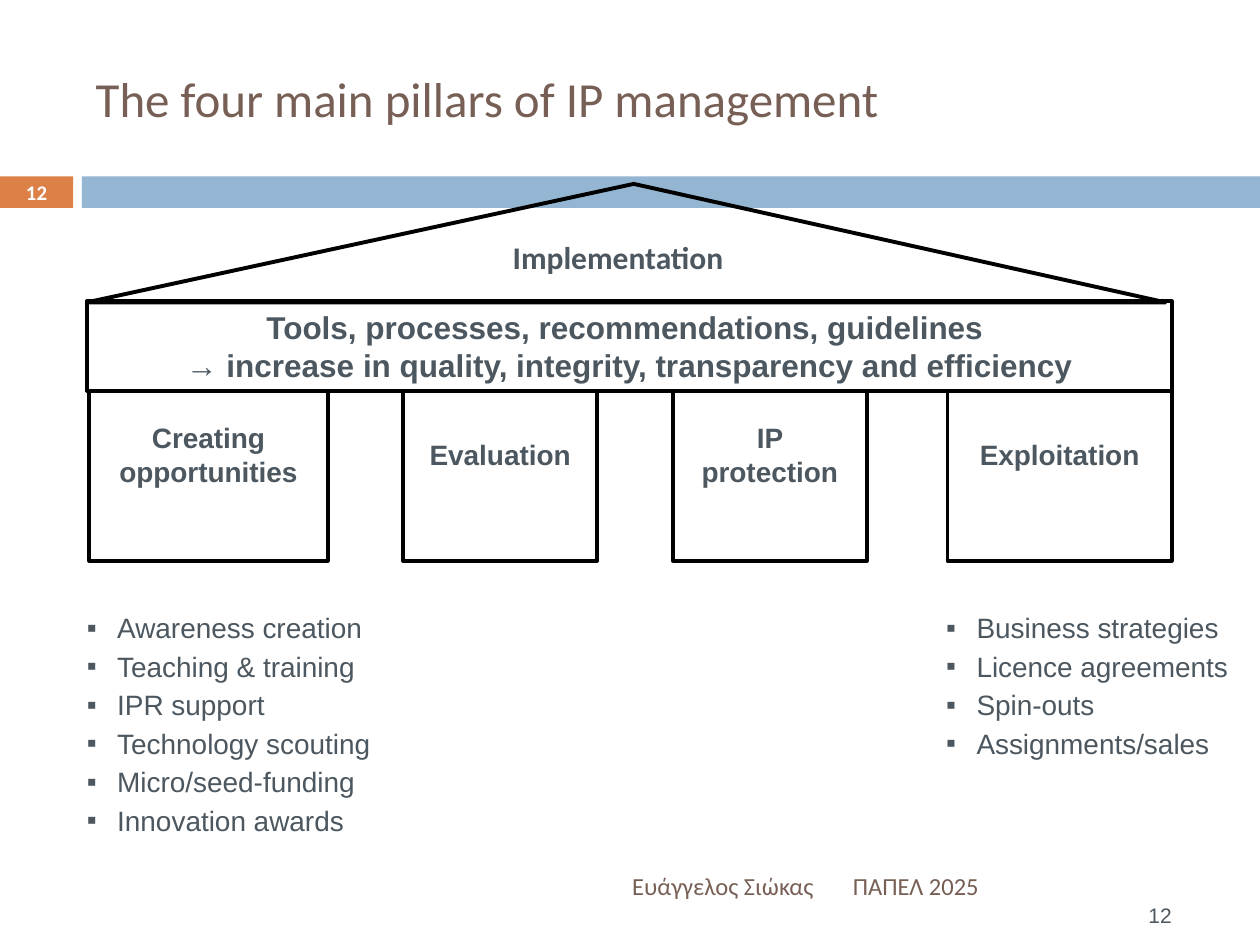
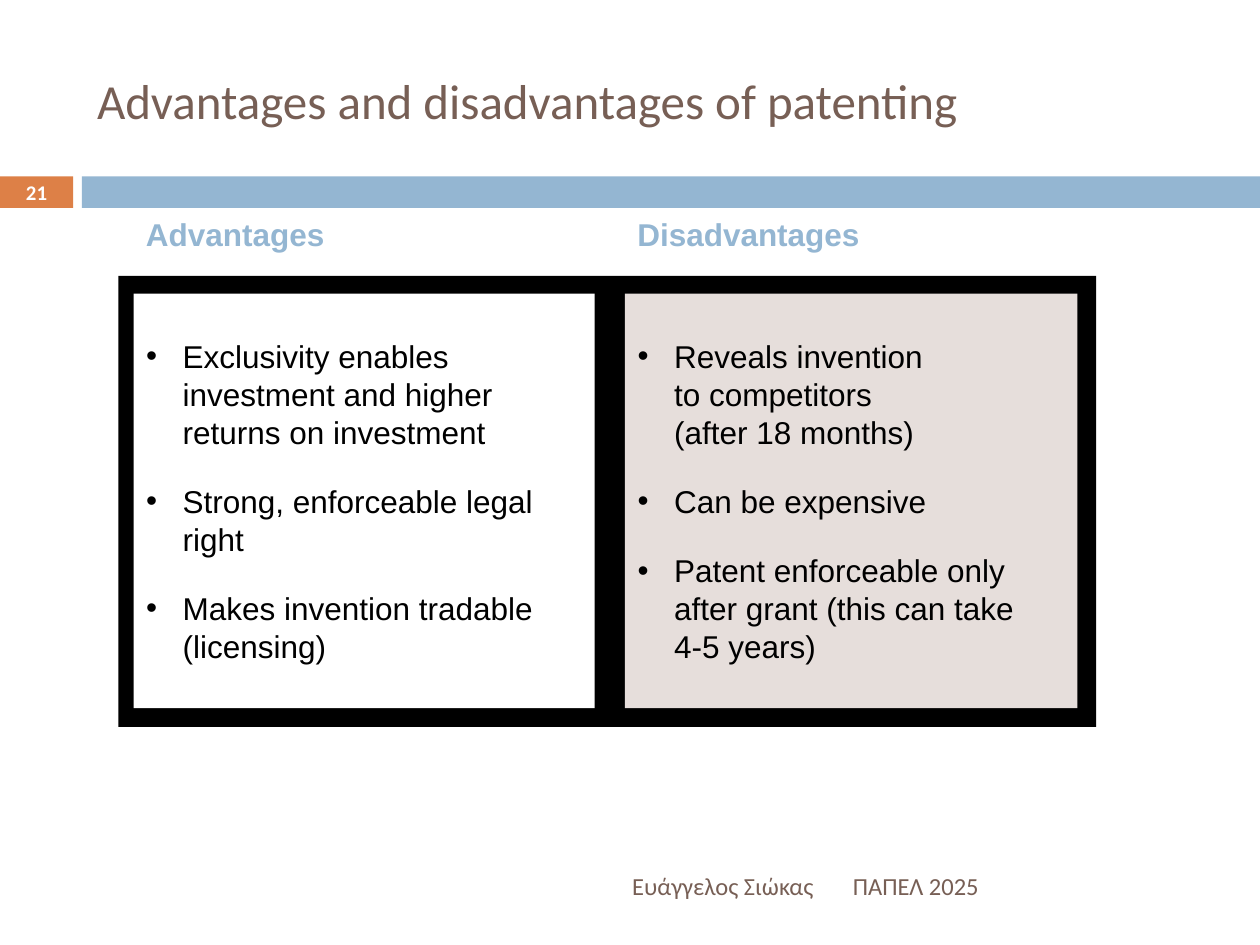
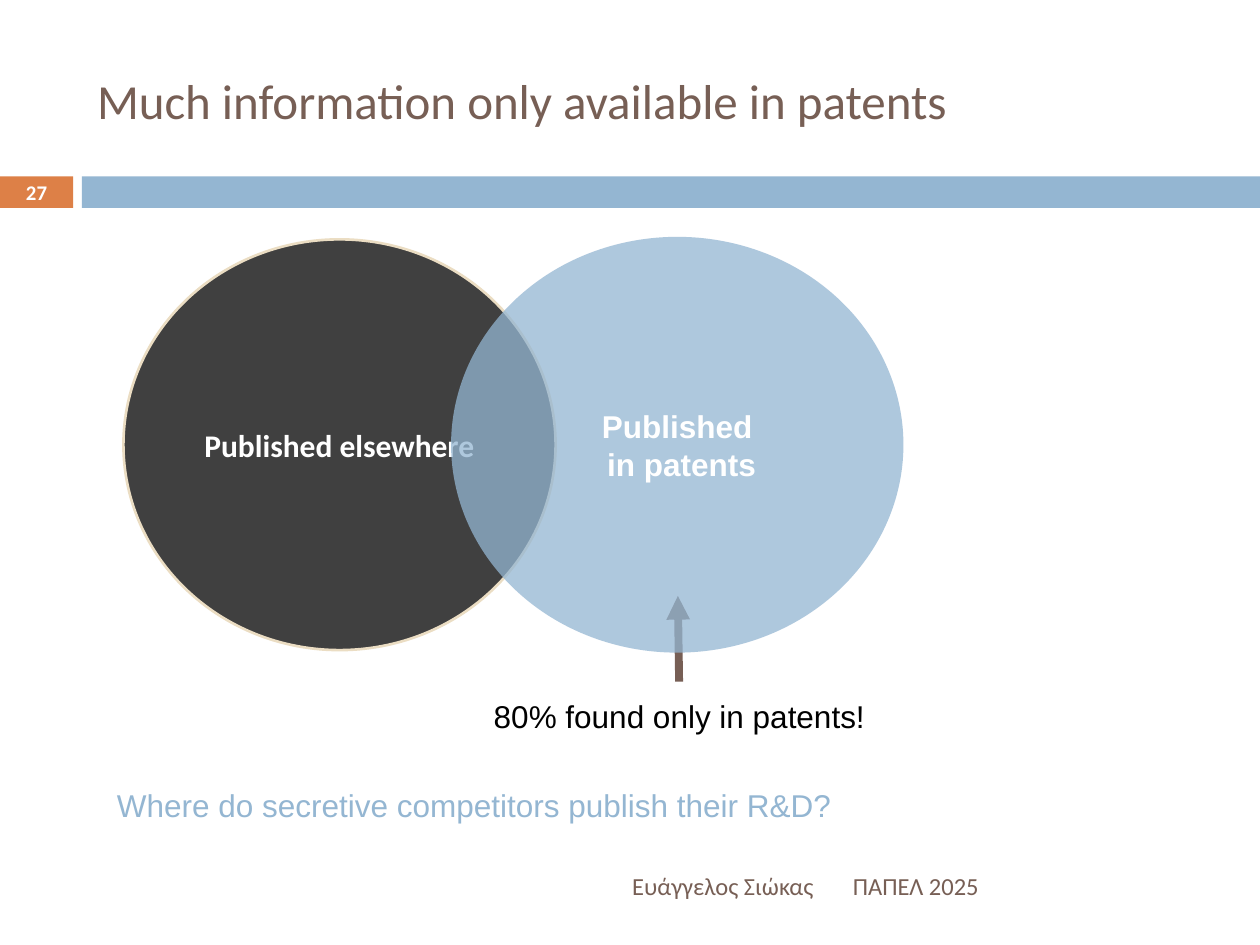
from dataclasses import dataclass
from typing import NamedTuple, Optional

from lxml.etree import SubElement
from pptx import Presentation
from pptx.dml.color import RGBColor
from pptx.enum.shapes import MSO_CONNECTOR as Link, MSO_SHAPE as Form
from pptx.enum.text import MSO_ANCHOR as Anchor, MSO_AUTO_SIZE as Auto, PP_ALIGN as Align
from pptx.oxml.ns import qn
from pptx.util import Inches, Pt

# Shared colours
BROWN, BLUE, ORANGE = "775F55", "94B6D2", "DD8047"
SLATE, BLACK, WHITE = "4C575F", "000000", "FFFFFF"
SAND, ROSE = "EBDDC3", "E6DEDB"


class Box(NamedTuple):
    left: float
    top: float
    width: float
    height: float


@dataclass(frozen=True)
class Style:
    size: float
    color: str
    font: str = "Arial"
    bold: bool = False
    align: Align = Align.LEFT
    anchor: Anchor = Anchor.TOP
    wrap: bool = True


@dataclass(frozen=True)
class Bullet:
    mark: str
    indent: float
    after: float = 0
    line: Optional[float] = None


@dataclass(frozen=True)
class Pillar:
    text: str
    left: float
    width: float
    inset: float


# Shared places and text styles
HEAD = Box(0.67, 0.25, 8.92, 1.08)
TITLE = Style(28, BROWN, "Calibri", anchor=Anchor.MIDDLE)
NUMBER = Style(11.9, WHITE, "Calibri", True, Align.CENTER, Anchor.MIDDLE)
COURSE = Style(14, BROWN, "Calibri", anchor=Anchor.MIDDLE)
AUTHOR = Style(14, BROWN, "Calibri", align=Align.RIGHT, anchor=Anchor.MIDDLE)


def rgb(code: str) -> RGBColor:
    return RGBColor.from_string(code)


def place(shape, box: Box) -> None:
    shape.left, shape.top, shape.width, shape.height = map(Inches, box)


def write(shape, lines: list[str], style: Style, bullet: Optional[Bullet] = None) -> None:
    frame = shape.text_frame
    frame.auto_size = Auto.NONE
    frame.word_wrap = style.wrap
    frame.vertical_anchor = style.anchor
    for index, line in enumerate(lines):
        para = frame.add_paragraph() if index else frame.paragraphs[0]
        para.text = line
        para.alignment = style.align
        para.space_before = Pt(0)
        if bullet:
            mark(para, bullet)
        for run in para.runs:
            font = run.font
            font.name, font.size, font.bold = style.font, Pt(style.size), style.bold
            font.color.rgb = rgb(style.color)


def mark(para, bullet: Bullet) -> None:
    props = para._p.get_or_add_pPr()
    props.set("marL", str(Inches(bullet.indent)))
    props.set("indent", str(-Inches(bullet.indent)))
    SubElement(props, qn("a:buChar")).set("char", bullet.mark)
    para.space_after = Pt(bullet.after)
    if bullet.line:
        para.line_spacing = Pt(bullet.line)


def label(slide, box: Box, text: str, style: Style):
    shape = slide.shapes.add_textbox(*map(Inches, box))
    write(shape, [text], style)
    return shape


def draw(slide, form: Form, box: Box, fill: Optional[str] = None,
         line: Optional[str] = None, weight: float = 2.25, alpha: int = 100):
    shape = slide.shapes.add_shape(form, *map(Inches, box))
    shape.shadow.inherit = False
    if fill:
        shape.fill.solid()
        shape.fill.fore_color.rgb = rgb(fill)
        if alpha < 100:
            tint = shape.fill._xPr.find(".//" + qn("a:srgbClr"))
            SubElement(tint, qn("a:alpha")).set("val", str(alpha * 1000))
    else:
        shape.fill.background()
    if line:
        shape.line.color.rgb = rgb(line)
        shape.line.width = Pt(weight)
    else:
        shape.line.fill.background()
    return shape


def arrow(slide, start: tuple[float, float], end: tuple[float, float], color: str, weight: float) -> None:
    link = slide.shapes.add_connector(Link.STRAIGHT, *map(Inches, start + end))
    link.line.color.rgb = rgb(color)
    link.line.width = Pt(weight)
    SubElement(link.line._get_or_add_ln(), qn("a:tailEnd")).set("type", "triangle")
    SubElement(link._element.spPr, qn("a:effectLst"))


def start(deck, layout: int, title: str, number: int, head: Box = HEAD):
    """Add a slide with its title, band, number and footer."""
    slide = deck.slides.add_slide(deck.slide_layouts[layout])
    place(slide.shapes.title, head)
    write(slide.shapes.title, [title], TITLE)
    draw(slide, Form.RECTANGLE, Box(0, 1.4, 0.58, 0.25), ORANGE)
    draw(slide, Form.RECTANGLE, Box(0.65, 1.4, 9.35, 0.25), BLUE)
    label(slide, Box(0, 1.39, 0.58, 0.27), str(number), NUMBER)
    label(slide, Box(6.67, 6.83, 2.92, 0.4), "ΠΑΠΕΛ 2025", COURSE)
    label(slide, Box(0.67, 6.83, 5.93, 0.4), "Ευάγγελος Σιώκας ", AUTHOR)
    return slide


def pillars(deck) -> None:
    slide = start(deck, 3, "The four main pillars of IP management", 12,
                  Box(0.66, 0.52, 8.66, 0.51))
    # Lists below the outer pillars
    square = Bullet("▪", 0.24, line=22)
    lists = [
        (1, Box(0.59, 4.76, 3.38, 1.93),
         ["Awareness creation", "Teaching & training", "IPR support",
          "Technology scouting", "Micro/seed-funding", "Innovation awards"]),
        (2, Box(7.41, 4.76, 4.5, 1.31),
         ["Business strategies", "Licence agreements", "Spin-outs", "Assignments/sales"]),
    ]
    for index, box, items in lists:
        body = slide.placeholders[index]
        place(body, box)
        write(body, items, Style(16, SLATE), square)

    # Pillars
    name = Style(16, SLATE, bold=True, align=Align.CENTER)
    for pillar in (Pillar("Creating opportunities", 0.71, 1.89, 0.31),
                   Pillar("Evaluation", 3.2, 1.54, 0.44),
                   Pillar("IP protection", 5.34, 1.54, 0.31),
                   Pillar("Exploitation", 7.52, 1.78, 0.44)):
        shape = draw(slide, Form.RECTANGLE, Box(pillar.left, 3.03, pillar.width, 1.42), WHITE, BLACK)
        write(shape, [pillar.text], name)
        shape.text_frame.margin_top = Inches(pillar.inset)

    # Beam and roof
    beam = draw(slide, Form.RECTANGLE, Box(0.69, 2.39, 8.61, 0.71), WHITE, BLACK)
    write(beam, ["Tools, processes, recommendations, guidelines \n"
                 "→ increase in quality, integrity, transparency and efficiency"],
          Style(18, SLATE, bold=True, align=Align.CENTER, anchor=Anchor.MIDDLE))
    roof = draw(slide, Form.ISOSCELES_TRIANGLE, Box(0.69, 1.46, 8.56, 0.94), line=BLACK)
    roof.adjustments[0] = 0.507
    label(slide, Box(3.87, 1.84, 2.07, 0.4), "Implementation",
          Style(18, SLATE, "Calibri", True, Align.CENTER, wrap=False))

    # Second slide number
    page = label(slide, Box(8.47, 7.14, 0.83, 0.24), "12",
                 Style(12, SLATE, align=Align.RIGHT, anchor=Anchor.MIDDLE))
    frame = page.text_frame
    frame.margin_left = frame.margin_right = frame.margin_top = frame.margin_bottom = 0


def patenting(deck) -> None:
    slide = start(deck, 3, "Advantages and disadvantages of patenting", 21)
    # Black frame behind both lists
    frame = draw(slide, Form.RECTANGLE, Box(0.94, 2.19, 7.76, 3.58), BLACK)
    slide.placeholders[1].element.addprevious(frame.element)

    dot = Bullet("•", 0.29, after=18)
    sides = [
        ("Advantages", 1.06, 3.66, WHITE,
         ["Exclusivity enables investment and higher returns on investment",
          "Strong, enforceable legal right",
          "Makes invention tradable (licensing)"]),
        ("Disadvantages", 4.96, 3.59, ROSE,
         ["Reveals invention \nto competitors \n(after 18 months)",
          "Can be expensive",
          "Patent enforceable only after grant (this can take \n4-5 years)"]),
    ]
    for index, (head, left, width, fill, items) in enumerate(sides, 1):
        body = slide.placeholders[index]
        place(body, Box(left, 2.33, width, 3.29))
        body.fill.solid()
        body.fill.fore_color.rgb = rgb(fill)
        write(body, items, Style(18, BLACK, anchor=Anchor.MIDDLE), dot)
        label(slide, Box(left, 1.66, 2.13, 0.4), head, Style(18, BLUE, bold=True))


def sources(deck) -> None:
    slide = start(deck, 5, "Much information only available in patents", 27)
    # Notes and arrow below the circles
    label(slide, Box(3.82, 5.48, 3.15, 0.4), "80% found only in patents!",
          Style(18, BLACK, wrap=False))
    arrow(slide, (5.39, 5.41), (5.38, 4.73), BROWN, 4.5)
    label(slide, Box(0.83, 6.19, 5.87, 0.4), "Where do secretive competitors publish their R&D?",
          Style(18, BLUE, wrap=False))

    # Overlapping circles
    circles = [
        (Box(0.98, 1.9, 3.43, 3.26), BLACK, SAND, "Calibri", ["Published elsewhere"]),
        (Box(3.58, 1.88, 3.59, 3.3), BLUE, None, "Arial", ["Published", " in patents"]),
    ]
    for box, fill, line, font, lines in circles:
        shape = draw(slide, Form.OVAL, box, fill, line, 1.5, alpha=75)
        write(shape, lines, Style(18, WHITE, font, True, Align.CENTER, Anchor.MIDDLE))


def main() -> None:
    deck = Presentation()
    deck.slide_width, deck.slide_height = Inches(10), Inches(7.5)
    for build in (pillars, patenting, sources):
        build(deck)
    deck.save("out.pptx")


if __name__ == "__main__":
    main()
